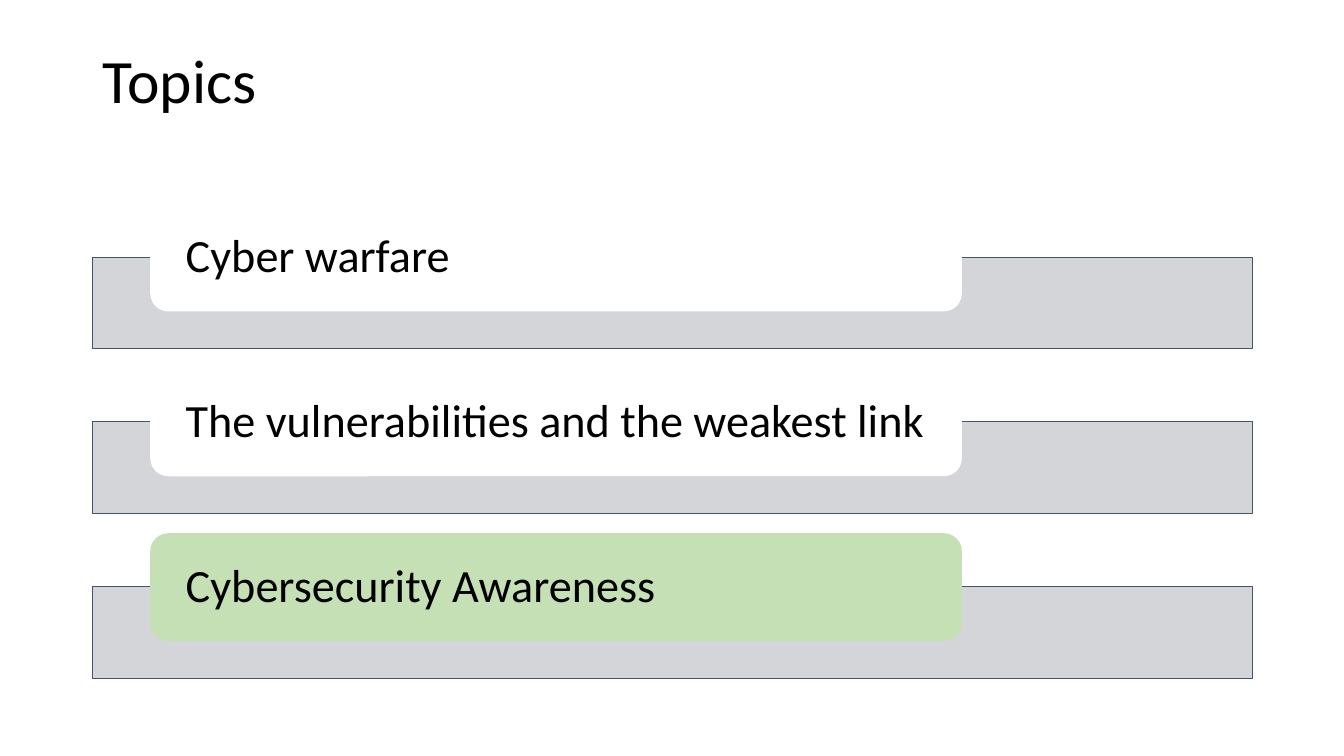
"""Build the Topics slide: three grey bars, each with an overlapping label."""
import pptx
import pptx.dml.color
import pptx.enum.shapes
import pptx.enum.text
import pptx.util
from lxml import etree
from pptx.util import Inches, Pt

RGBColor = pptx.dml.color.RGBColor
BLACK = RGBColor(0x00, 0x00, 0x00)
WHITE = RGBColor(0xFF, 0xFF, 0xFF)
GREEN = RGBColor(0xC5, 0xE0, 0xB4)
GREY = RGBColor(0xCF, 0xD1, 0xD4)
SLATE = RGBColor(0x44, 0x54, 0x6A)

TITLE = "Topics"
TOPICS = [
    ("Cyber warfare", WHITE),
    ("The vulnerabilities and the weakest link", WHITE),
    ("Cybersecurity Awareness", GREEN),
]
LEFT, WIDTH = 0.92, 11.5
FIRST_BAR, PITCH, BAR_HEIGHT = 2.55, 1.635, 0.91
LABEL_LEFT, LABEL_WIDTH, LABEL_HEIGHT, LABEL_RISE = 1.49, 8.05, 1.07, 0.53


def add_box(page, kind, left, top, width, height, color):
    """Add a filled shape without shadow or outline."""
    box = page.shapes.add_shape(
        kind, Inches(left), Inches(top), Inches(width), Inches(height))
    box.shadow.inherit = False
    box.fill.solid()
    box.fill.fore_color.rgb = color
    box.line.fill.background()
    return box


def write(box, text, size):
    """Write one left-aligned line, centred vertically."""
    frame = box.text_frame
    frame.word_wrap = True
    frame.vertical_anchor = pptx.enum.text.MSO_ANCHOR.MIDDLE
    para = frame.paragraphs[0]
    para.alignment = pptx.enum.text.PP_ALIGN.LEFT
    para.line_spacing = 0.9
    span = para.add_run()
    span.text = text
    span.font.name = "Calibri"
    span.font.size = Pt(size)
    span.font.color.rgb = BLACK


def add_topic(page, text, color, top):
    """Add a grey bar and the label that overlaps its top edge."""
    shapes = pptx.enum.shapes.MSO_SHAPE
    bar = add_box(page, shapes.RECTANGLE, LEFT, top, WIDTH, BAR_HEIGHT, GREY)
    bar.line.color.rgb = SLATE
    bar.line.width = Pt(0.5)
    tint = bar.fill._xPr.find(".//" + pptx.oxml.ns.qn("a:srgbClr"))
    etree.SubElement(tint, pptx.oxml.ns.qn("a:alpha"), val="90000")

    label = add_box(page, shapes.ROUNDED_RECTANGLE, LABEL_LEFT,
                    top - LABEL_RISE, LABEL_WIDTH, LABEL_HEIGHT, color)
    frame = label.text_frame
    frame.margin_left = frame.margin_right = Inches(0.3)
    frame.margin_top = frame.margin_bottom = 0
    write(label, text, 33)


def main():
    """Create the deck and save it."""
    deck = pptx.Presentation()
    deck.slide_width, deck.slide_height = Inches(13.33), Inches(7.5)
    page = deck.slides.add_slide(deck.slide_layouts[5])
    title = page.shapes.title
    title.left, title.top = Inches(LEFT), Inches(0.4)
    title.width, title.height = Inches(WIDTH), Inches(0.85)
    write(title, TITLE, 44)
    for index, (text, color) in enumerate(TOPICS):
        add_topic(page, text, color, FIRST_BAR + index * PITCH)
    deck.save("out.pptx")


if __name__ == "__main__":
    main()
